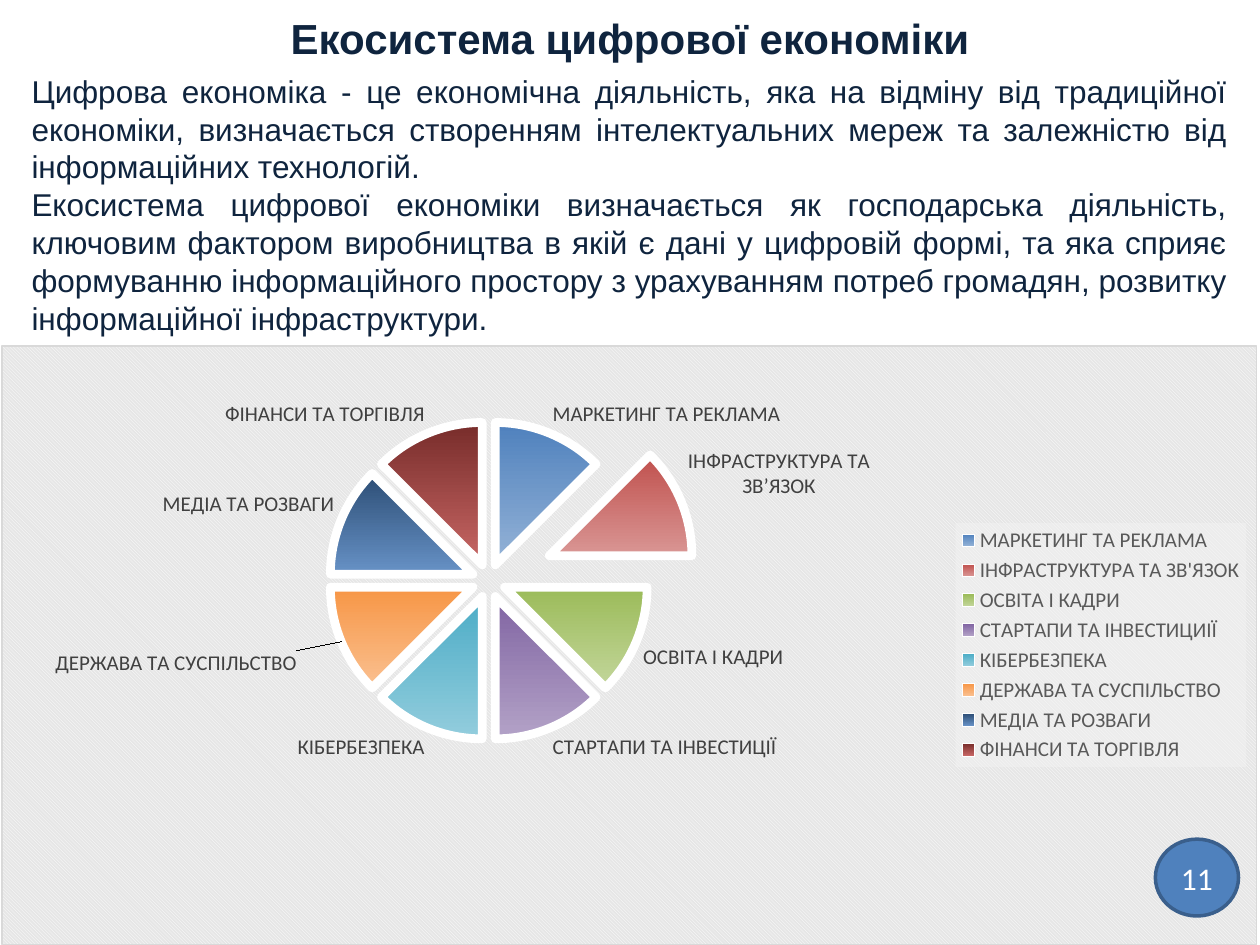
from dataclasses import dataclass

from pptx import Presentation
from pptx import util as u
from pptx.chart import data as cd
from pptx.dml.color import RGBColor
from pptx.enum import chart as ce, shapes, text
from pptx.oxml import parse_xml
from pptx.oxml.ns import nsdecls, qn


@dataclass(frozen=True)
class Theme:
    heading: str = "Arial"
    label: str = "Calibri"
    ink: str = "0F243E"
    white: str = "FFFFFF"
    badge: str = "4F81BD"
    badge_line: str = "3A5F8C"
    label_ink: str = "404040"
    legend_ink: str = "595959"
    legend_fill: str = "F2F2F2"
    panel: str = "E6E6E6"
    panel_line: str = "D9D9D9"
    title_size: int = 24
    body_size: int = 18
    chart_size: int = 12


TITLE = "Екосистема цифрової економіки"
BODY = [
    "Цифрова економіка - це економічна діяльність, яка на відміну від традиційної "
    "економіки, визначається створенням інтелектуальних мереж та залежністю від "
    "інформаційних технологій.",
    "Екосистема цифрової економіки визначається як господарська діяльність, ключовим "
    "фактором виробництва в якій є дані у цифровій формі, та яка сприяє формуванню "
    "інформаційного простору з урахуванням потреб громадян, розвитку інформаційної "
    "інфраструктури.",
]
# category, gradient start, gradient end
SECTORS = [
    ("МАРКЕТИНГ ТА РЕКЛАМА", "4F81BD", "95B3D7"),
    ("ІНФРАСТРУКТУРА ТА ЗВ'ЯЗОК", "C0504D", "D99694"),
    ("ОСВІТА І КАДРИ", "9BBB59", "C3D69B"),
    ("СТАРТАПИ ТА ІНВЕСТИЦИІЇ", "8064A2", "B3A2C7"),
    ("КІБЕРБЕЗПЕКА", "4BACC6", "93CDDD"),
    ("ДЕРЖАВА ТА СУСПІЛЬСТВО", "F79646", "FAC090"),
    ("МЕДІА ТА РОЗВАГИ", "2C4D75", "6792C6"),
    ("ФІНАНСИ ТА ТОРГІВЛЯ", "772C2A", "C86765"),
]
LABEL_TEXT = {1: "ІНФРАСТРУКТУРА ТА ЗВ’ЯЗОК", 3: "СТАРТАПИ ТА ІНВЕСТИЦІЇ"}
LABEL_SHIFT = {5: (-0.03, 0.01)}
PULLED_OUT = {1: 46}
PLOT_AREA = (0.086, 0.095, 0.604, 0.595)


def rgb(value):
    return RGBColor.from_string(value)


def layout_xml(**values):
    """Manual chart layout holding the given c: elements in order."""
    inner = "".join(f'<c:{k} val="{v}"/>' for k, v in values.items())
    return parse_xml(f'<c:layout {nsdecls("c")}><c:manualLayout>{inner}'
                     "</c:manualLayout></c:layout>")


def shape_props(inner):
    return parse_xml(f'<c:spPr {nsdecls("c", "a")}>{inner}</c:spPr>')


class SlideBuilder:
    def __init__(self, s, theme):
        self.s, self.t = s, theme

    def font(self, f, name, size, color, bold=False):
        for key, value in dict(name=name, size=u.Pt(size), bold=bold).items():
            setattr(f, key, value)
        f.color.rgb = rgb(color)

    def placeholder(self, sp, box, paragraphs, size, align, bold=False):
        sp.left, sp.top, sp.width, sp.height = map(u.Inches, box)
        tf = sp.text_frame
        tf.text = "\n".join(paragraphs)
        tf.auto_size = text.MSO_AUTO_SIZE.NONE
        for p in tf.paragraphs:
            for key, value in dict(alignment=align, space_before=u.Pt(0)).items():
                setattr(p, key, value)
            pPr = p._p.get_or_add_pPr()
            pPr.set("marL", "0")
            pPr.set("indent", "0")
            pPr.append(parse_xml(f'<a:buNone {nsdecls("a")}/>'))
            self.font(p.runs[0].font, self.t.heading, size, self.t.ink, bold)

    def pie(self, box, sectors):
        t = self.t
        data = cd.CategoryChartData()
        data.categories = [name for name, *_ in sectors]
        data.add_series("Series 1", [12] * len(sectors))
        chart = self.s.shapes.add_chart(
            ce.XL_CHART_TYPE.PIE, *map(u.Inches, box), data).chart
        chart.has_title = False
        self.font(chart.font, t.label, 10, "000000")
        self.panel(chart)
        self.legend(chart)
        series = chart.plots[0].series[0]
        self.labels(series)
        for i, (name, start, end) in enumerate(sectors):
            self.slice(series.points[i], i, start, end)
            if i in LABEL_TEXT or i in LABEL_SHIFT:
                self.custom_label(series.points[i], i, name)
        explosion = parse_xml(f'<c:explosion {nsdecls("c")} val="25"/>')
        series._element.find(qn("c:dPt")).addprevious(explosion)

    def panel(self, chart):
        t = self.t
        space = chart._chartSpace.find(qn("c:chart"))
        space.addnext(shape_props(
            '<a:pattFill prst="dkDnDiag">'
            f'<a:fgClr><a:srgbClr val="{t.white}"/></a:fgClr>'
            f'<a:bgClr><a:srgbClr val="{t.panel}"/></a:bgClr></a:pattFill>'
            f'<a:ln w="9525"><a:solidFill><a:srgbClr val="{t.panel_line}"/>'
            "</a:solidFill></a:ln>"))
        plot = space.find(qn("c:plotArea"))
        for old in plot.findall(qn("c:layout")):
            plot.remove(old)
        x, y, w, h = PLOT_AREA
        plot.insert(0, layout_xml(layoutTarget="inner", xMode="edge", yMode="edge",
                                  x=x, y=y, w=w, h=h))

    def legend(self, chart):
        t = self.t
        chart.has_legend = True
        lg = chart.legend
        lg.position = ce.XL_LEGEND_POSITION.RIGHT
        lg.include_in_layout = False
        self.font(lg.font, t.label, t.chart_size, t.legend_ink)
        lg._element.find(qn("c:overlay")).addnext(shape_props(
            f'<a:solidFill><a:srgbClr val="{t.legend_fill}">'
            '<a:alpha val="50000"/></a:srgbClr></a:solidFill>'))

    def labels(self, series):
        dl = series.data_labels
        for key, value in dict(show_value=False, show_category_name=True,
                               position=ce.XL_LABEL_POSITION.OUTSIDE_END).items():
            setattr(dl, key, value)
        self.font(dl.font, self.t.label, self.t.chart_size, self.t.label_ink)

    def slice(self, point, i, start, end):
        fill = point.format.fill
        fill.gradient()
        fill.gradient_angle = 270
        for stop, color in zip(fill.gradient_stops, (start, end)):
            stop.color.rgb = rgb(color)
        line = point.format.line
        line.width = u.Pt(5)
        line.color.rgb = rgb(self.t.white)
        dPt = next(d for d in point._ser.findall(qn("c:dPt"))
                   if d.find(qn("c:idx")).get("val") == str(i))
        dPt.find(qn("c:spPr")).addprevious(parse_xml(
            f'<c:explosion {nsdecls("c")} val="{PULLED_OUT.get(i, 12)}"/>'))

    def custom_label(self, point, i, name):
        dl = point.data_label
        p = dl.text_frame.paragraphs[0]
        r = p.add_run()
        r.text = LABEL_TEXT.get(i, name)
        self.font(r.font, self.t.label, self.t.chart_size, self.t.label_ink)
        dl.position = ce.XL_LABEL_POSITION.OUTSIDE_END
        if i in LABEL_SHIFT:
            x, y = LABEL_SHIFT[i]
            dLbl = dl._get_or_add_dLbl()
            dLbl.find(qn("c:idx")).addnext(layout_xml(x=x, y=y))

    def badge(self, box, number):
        t = self.t
        sp = self.s.shapes.add_shape(shapes.MSO_SHAPE.OVAL, *map(u.Inches, box))
        sp.shadow.inherit = False
        sp.fill.solid()
        sp.fill.fore_color.rgb = rgb(t.badge)
        sp.line.color.rgb = rgb(t.badge_line)
        sp.line.width = u.Pt(2)
        tf = sp.text_frame
        tf.vertical_anchor = text.MSO_ANCHOR.MIDDLE
        p = tf.paragraphs[0]
        p.alignment = text.PP_ALIGN.CENTER
        r = p.add_run()
        r.text = number
        self.font(r.font, t.label, t.body_size, t.white)


def main():
    prs = Presentation()
    prs.slide_width, prs.slide_height = u.Inches(10), u.Inches(7.5)
    s = prs.slides.add_slide(prs.slide_layouts[1])
    theme = Theme()
    b = SlideBuilder(s, theme)
    b.pie((0.01, 2.74, 9.97, 4.76), SECTORS)
    b.placeholder(s.shapes.title, (0, 0.05, 10, 0.5), [TITLE],
                  theme.title_size, text.PP_ALIGN.CENTER, bold=True)
    b.placeholder(s.placeholders[1], (0.15, 0.52, 9.69, 2.22), BODY,
                  theme.body_size, text.PP_ALIGN.JUSTIFY)
    b.badge((9.17, 6.66, 0.66, 0.61), "11")
    prs.save("out.pptx")


if __name__ == "__main__":
    main()
